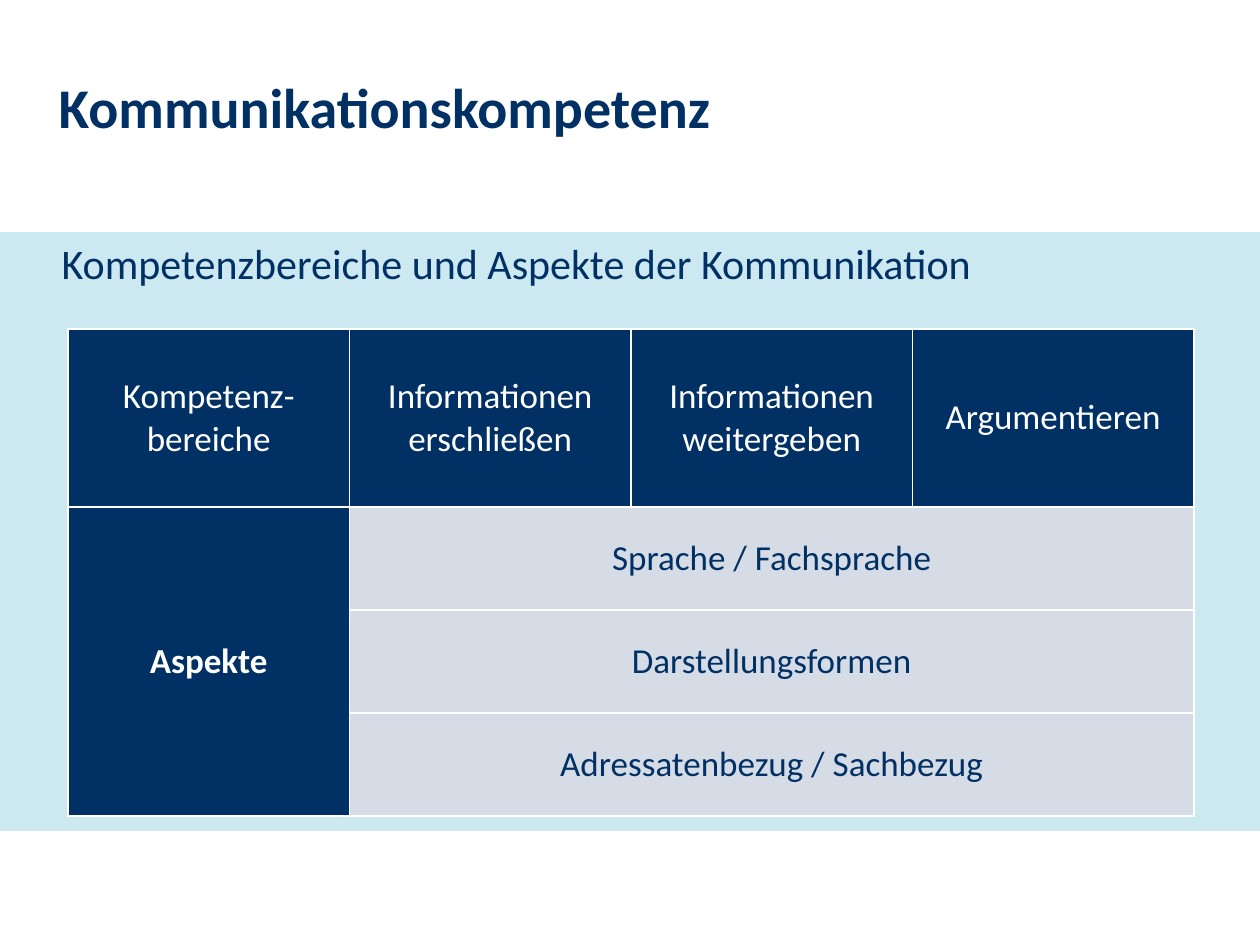
from lxml import etree
from pptx import Presentation
from pptx.dml.color import RGBColor
from pptx.enum.shapes import MSO_SHAPE
from pptx.enum.text import MSO_ANCHOR, MSO_AUTO_SIZE, PP_ALIGN
from pptx.oxml.ns import qn
from pptx.util import Pt

RECTANGLE = MSO_SHAPE.RECTANGLE
TOP, MIDDLE = MSO_ANCHOR.TOP, MSO_ANCHOR.MIDDLE
NO_FIT = MSO_AUTO_SIZE.NONE
LEFT, CENTER = PP_ALIGN.LEFT, PP_ALIGN.CENTER

NAVY, WHITE, SKY, GREY = "003064", "FFFFFF", "CCE9F2", "D6DCE5"
FONT = "Calibri"
BORDER = Pt(0.96)
HEADINGS = ["Kompetenz-bereiche", "Informationen erschließen",
            "Informationen weitergeben", "Argumentieren"]
ASPECTS = ["Sprache / Fachsprache", "Darstellungsformen",
           "Adressatenbezug / Sachbezug"]


def px(length):
    return round(length * 914400 / 126)


def color(value):
    return RGBColor.from_string(value)


class SlideBuilder:
    """Holds the style and the current slide, and draws each kind of element."""

    def __init__(self, slide):
        self.slide = slide

    def style(self, paragraph, size, ink, align, bold=False):
        paragraph.alignment = align
        font = paragraph.font
        font.name, font.size, font.bold = FONT, Pt(size), bold
        font.color.rgb = color(ink)

    def band(self, left, top, width, height, fill):
        shape = self.slide.shapes.add_shape(
            RECTANGLE, px(left), px(top), px(width), px(height))
        shape.shadow.inherit = False
        shape.fill.solid()
        shape.fill.fore_color.rgb = color(fill)
        shape.line.fill.background()
        self.slide.shapes._spTree.insert(2, shape._element)

    def placeholder(self, index, text, left, top, width, height, size, bold=False):
        box = self.slide.placeholders[index]
        box.left, box.top = px(left), px(top)
        box.width, box.height = px(width), px(height)
        frame = box.text_frame
        frame.text = text
        frame.word_wrap, frame.auto_size = True, NO_FIT
        frame.vertical_anchor = TOP
        paragraph = frame.paragraphs[0]
        properties = paragraph._p.get_or_add_pPr()
        properties.set("marL", "0")
        properties.set("indent", "0")
        etree.SubElement(properties, qn("a:buNone"))
        paragraph.space_before = Pt(0)
        self.style(paragraph, size, NAVY, LEFT, bold)

    def table(self, left, top, width, row_heights, columns):
        frame = self.slide.shapes.add_table(
            len(row_heights), columns, px(left), px(top), px(width),
            px(sum(row_heights)))
        table = frame.table
        table.first_row = table.horz_banding = False
        for column in table.columns:
            column.width = px(width / columns)
        for row, height in zip(table.rows, row_heights):
            row.height = px(height)
        for cell in table.iter_cells():
            self.borders(cell)
        return table

    def borders(self, cell):
        properties = cell._tc.get_or_add_tcPr()
        for side in ("a:lnL", "a:lnR", "a:lnT", "a:lnB"):
            line = etree.SubElement(properties, qn(side), w=str(BORDER))
            fill = etree.SubElement(line, qn("a:solidFill"))
            etree.SubElement(fill, qn("a:srgbClr"), val=WHITE)

    def cell(self, cell, text, fill, ink, bold=False):
        cell.text = text
        cell.vertical_anchor = MIDDLE
        cell.fill.solid()
        cell.fill.fore_color.rgb = color(fill)
        self.style(cell.text_frame.paragraphs[0], 20, ink, CENTER, bold)


def main():
    deck = Presentation()
    deck.slide_width, deck.slide_height = px(1260), px(945)
    page = SlideBuilder(deck.slides.add_slide(deck.slide_layouts[1]))

    page.band(0, 232, 1260, 599, SKY)
    page.placeholder(0, "Kommunikationskompetenz", 46, 66, 720, 96, 32, True)
    page.placeholder(1, "Kompetenzbereiche und Aspekte der Kommunikation",
                     49, 231, 1182, 474, 24)

    table = page.table(68, 329, 1126, [178] + [103] * len(ASPECTS), len(HEADINGS))
    for column, heading in enumerate(HEADINGS):
        page.cell(table.cell(0, column), heading, NAVY, WHITE)
    last_row, last_column = len(ASPECTS), len(HEADINGS) - 1
    table.cell(1, 0).merge(table.cell(last_row, 0))
    page.cell(table.cell(1, 0), "Aspekte", NAVY, WHITE, True)
    for row, aspect in enumerate(ASPECTS, 1):
        table.cell(row, 1).merge(table.cell(row, last_column))
        page.cell(table.cell(row, 1), aspect, GREY, NAVY)

    deck.save("out.pptx")


if __name__ == "__main__":
    main()
